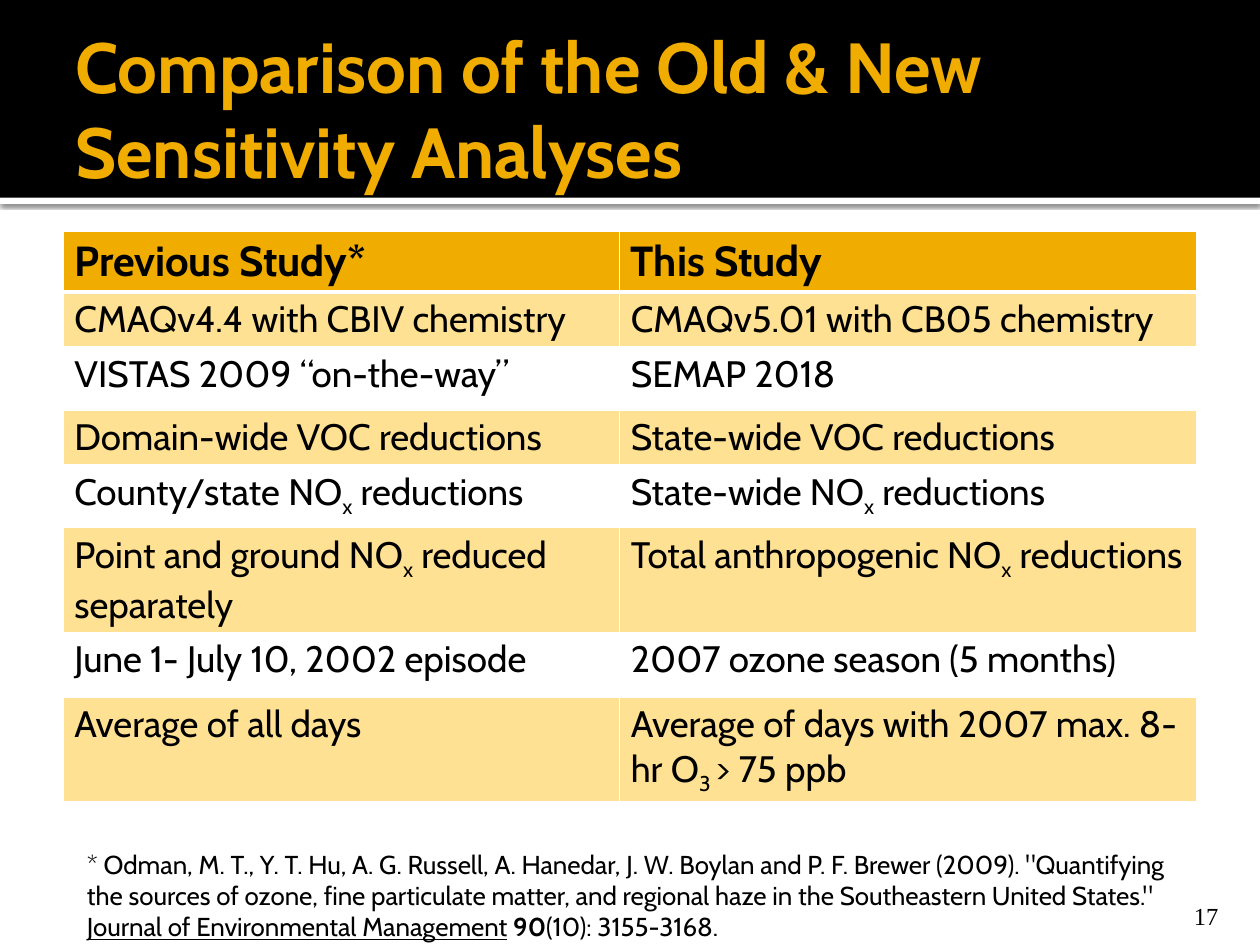
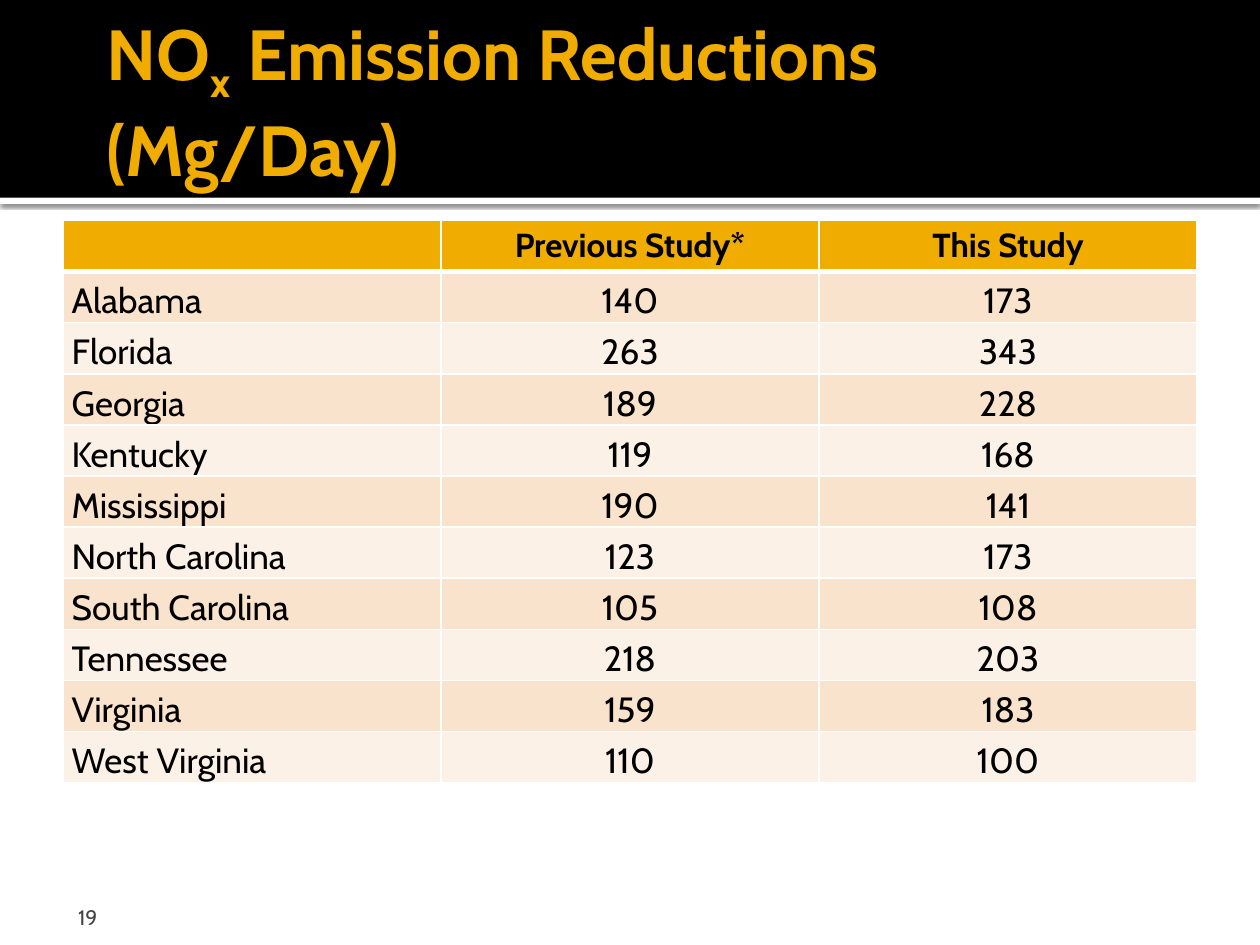
from dataclasses import dataclass

from lxml.etree import SubElement
from pptx import Presentation
from pptx.dml.color import RGBColor as Rgb
from pptx.enum.shapes import MSO_SHAPE as Shape
from pptx.enum.text import MSO_ANCHOR as Anchor, PP_ALIGN as Align
from pptx.oxml.ns import qn
from pptx.util import Pt


@dataclass(frozen=True)
class Theme:
    width: int = 720
    height: int = 540
    band_height: int = 113
    font: str = "Cabin"
    number_font: str = "Times New Roman"
    gold: str = "F0AD00"
    pale_gold: str = "FFE193"
    peach: str = "F9E3CC"
    pale_peach: str = "FCF1E7"
    black: str = "000000"
    grey: str = "454545"
    white: str = "FFFFFF"
    title_size: float = 40.5
    citation_size: float = 14.8
    study_header_size: int = 24
    study_size: int = 21
    amount_header_size: int = 19
    amount_size: int = 20
    right_number_size: int = 14
    left_number_size: int = 12


SUB = {"baseline": -25}
CELL_INSETS = (6.5, 3, 6.5, 3)
NO_INSETS = (0, 0, 0, 0)


class Deck:
    def __init__(self, theme):
        self.theme = theme
        self.presentation = Presentation()
        self.presentation.slide_width = Pt(theme.width)
        self.presentation.slide_height = Pt(theme.height)
        self.slide = None

    def new_slide(self, title, title_box):
        theme = self.theme
        self.slide = self.presentation.slides.add_slide(self.presentation.slide_layouts[6])
        strip = self.bar(theme.band_height, 3.6, theme.white)
        self.shadow(strip)
        self.bar(0, theme.band_height, theme.black)
        self.text(title_box, title, theme.gold, theme.title_size, bold=True,
                  anchor=Anchor.MIDDLE, insets=(7.2, 3.6, 3.6, 3.6))

    def bar(self, top, height, color):
        bar = self.slide.shapes.add_shape(
            Shape.RECTANGLE, 0, Pt(top), Pt(self.theme.width), Pt(height))
        bar.shadow.inherit = False
        bar.fill.solid()
        bar.fill.fore_color.rgb = Rgb.from_string(color)
        bar.line.fill.background()
        return bar

    def shadow(self, shape):
        effects = shape._element.spPr.find(qn("a:effectLst"))
        outer = SubElement(effects, qn("a:outerShdw"), blurRad=str(Pt(2.5)),
                           dist=str(Pt(0.8)), dir="5400000", rotWithShape="0")
        tint = SubElement(outer, qn("a:srgbClr"), val=self.theme.black)
        SubElement(tint, qn("a:alpha"), val="60000")

    def add_runs(self, paragraph, content, color, **base):
        """Fill a paragraph from a string or a list of strings and (string, format) pairs."""
        for part in [content] if isinstance(content, str) else content:
            words, extra = (part, {}) if isinstance(part, str) else part
            run = paragraph.add_run()
            run.text = words
            run.font.color.rgb = Rgb.from_string(color)
            for name, value in {"name": self.theme.font, **base, **extra}.items():
                if name == "baseline":
                    run._r.get_or_add_rPr().set("baseline", str(value * 1000))
                else:
                    setattr(run.font, name, value)

    def text(self, box, content, color, size, align=Align.LEFT, anchor=Anchor.TOP,
             insets=NO_INSETS, **base):
        frame = self.slide.shapes.add_textbox(*map(Pt, box)).text_frame
        frame.word_wrap = True
        frame.vertical_anchor = anchor
        self.set_insets(frame, insets)
        paragraph = frame.paragraphs[0]
        paragraph.alignment = align
        self.add_runs(paragraph, content, color, size=Pt(size), **base)

    @staticmethod
    def set_insets(holder, insets):
        for side, inset in zip(("left", "top", "right", "bottom"), insets):
            setattr(holder, f"margin_{side}", Pt(inset))

    def table(self, left, top, widths, heights, rows, header, body, bands):
        """Draw rows under a gold header; header and body are functions of the column
        that give a cell's format, and bands are the alternating fills."""
        theme = self.theme
        grid = self.slide.shapes.add_table(
            len(rows), len(widths), Pt(left), Pt(top), Pt(sum(widths)), Pt(sum(heights))).table
        grid.horz_banding = False
        for column, width in zip(grid.columns, widths):
            column.width = Pt(width)
        for row, height in zip(grid.rows, heights):
            row.height = Pt(height)
        for r, row in enumerate(rows):
            fill = bands[(r - 1) % len(bands)] if r else theme.gold
            for c, content in enumerate(row):
                style = body(c) if r else header(c)
                self.cell(grid.cell(r, c), content, fill, r, **style)

    def cell(self, cell, content, fill, row, size, align=Align.LEFT, anchor=Anchor.TOP,
             insets=CELL_INSETS):
        self.set_insets(cell, insets)
        cell.vertical_anchor = anchor
        paragraph = cell.text_frame.paragraphs[0]
        paragraph.alignment = align
        self.add_runs(paragraph, content, self.theme.black, size=Pt(size), bold=row == 0)
        heavy_side = {0: "lnB", 1: "lnT"}.get(row)
        for side in ("lnL", "lnR", "lnT", "lnB"):
            width = 3 if side == heavy_side else 1
            line = SubElement(cell._tc.get_or_add_tcPr(), qn(f"a:{side}"), w=str(Pt(width)))
            SubElement(SubElement(line, qn("a:solidFill")), qn("a:srgbClr"), val=self.theme.white)
        if fill:
            cell.fill.solid()
            cell.fill.fore_color.rgb = Rgb.from_string(fill)
        else:
            cell.fill.background()


def add_comparison(deck):
    theme = deck.theme
    deck.new_slide("Comparison of the Old & New Sensitivity Analyses", (36, 12.25, 648, 98.5))
    citation = [
        "* Odman, M. T., Y. T. Hu, A. G. Russell, A. Hanedar, J. W. Boylan and P. F. Brewer "
        "(2009). \"Quantifying the sources of ozone, fine particulate matter, and regional haze "
        "in the Southeastern United States.\" ",
        ("Journal of Environmental Management", {"underline": True}),
        " ", ("90", {"bold": True}), "(10): 3155-3168.",
    ]
    deck.text((49.7, 485, 627, 54), citation, theme.black, theme.citation_size)
    deck.text((645.8, 509.8, 57.6, 21.6), "17", theme.black, theme.right_number_size,
              align=Align.RIGHT, anchor=Anchor.BOTTOM, insets=(7.2, 3.6, 7.2, 0),
              name=theme.number_font)
    studies = [
        ("Previous Study*", "This Study"),
        ("CMAQv4.4 with CBIV chemistry", "CMAQv5.01 with CB05 chemistry"),
        ("VISTAS 2009 “on-the-way”", "SEMAP 2018"),
        ("Domain-wide VOC reductions", "State-wide VOC reductions"),
        (["County/state NO", ("x", SUB), " reductions"],
         ["State-wide NO", ("x", SUB), " reductions"]),
        (["Point and ground NO", ("x", SUB), " reduced separately"],
         ["Total anthropogenic NO", ("x", SUB), " reductions"]),
        ("June 1- July 10, 2002 episode", "2007 ozone season (5 months)"),
        ("Average of all days",
         ["Average of days with 2007 max. 8-hr O", ("3 ", SUB), "> 75 ppb"]),
    ]
    deck.table(36, 132, (318, 330), (34.5, 31.5, 36, 31, 36, 59.5, 37, 59.5), studies,
               header=lambda column: {"size": theme.study_header_size},
               body=lambda column: {"size": theme.study_size},
               bands=(theme.pale_gold, None))


def add_reductions(deck):
    theme = deck.theme
    deck.new_slide(["NO", ("x", SUB), " Emission Reductions (Mg/Day)"], (54, 12.25, 612, 90))
    deck.text((36, 509.8, 168, 21.6), "19", theme.grey, theme.left_number_size,
              anchor=Anchor.BOTTOM, insets=(8.6, 3.6, 3.6, 0))
    reductions = {
        "Alabama": (140, 173),
        "Florida": (263, 343),
        "Georgia": (189, 228),
        "Kentucky": (119, 168),
        "Mississippi": (190, 141),
        "North Carolina": (123, 173),
        "South Carolina": (105, 108),
        "Tennessee": (218, 203),
        "Virginia": (159, 183),
        "West Virginia": (110, 100),
    }
    rows = [("", "Previous Study*", "This Study")]
    rows += [(state, *map(str, amounts)) for state, amounts in reductions.items()]

    def body_style(column):
        names_state = column == 0
        return {"size": theme.amount_size, "anchor": Anchor.BOTTOM,
                "align": Align.LEFT if names_state else Align.CENTER,
                "insets": (5, 0.5, 0.5, 0) if names_state else NO_INSETS}

    deck.table(36, 126, [216] * 3, [29.2] * len(rows), rows,
               header=lambda column: {"size": theme.amount_header_size, "align": Align.CENTER},
               body=body_style,
               bands=(theme.peach, theme.pale_peach))


def main():
    deck = Deck(Theme())
    add_comparison(deck)
    add_reductions(deck)
    deck.presentation.save("out.pptx")


if __name__ == "__main__":
    main()
